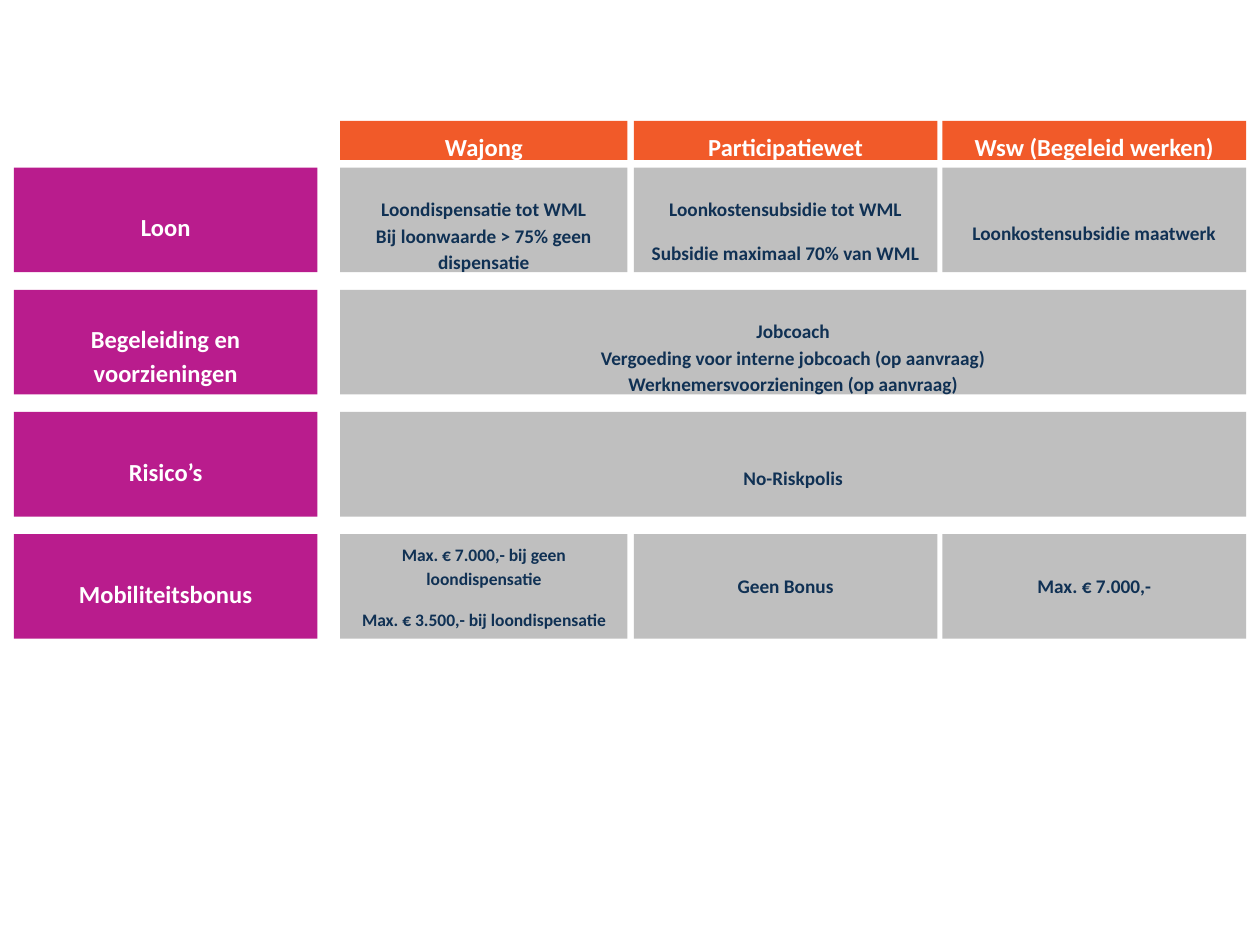
from copy import deepcopy
from dataclasses import dataclass

from pptx import Presentation
from pptx.dml.color import RGBColor
from pptx.enum.shapes import MSO_SHAPE
from pptx.enum.text import MSO_ANCHOR, PP_ALIGN
from pptx.oxml.ns import qn
from pptx.util import Inches, Pt


@dataclass(frozen=True)
class Theme:
    """Colours, font and type sizes of the slide."""
    font: str = "Calibri"
    header: RGBColor = RGBColor(0xF1, 0x5A, 0x29)
    label: RGBColor = RGBColor(0xB9, 0x1C, 0x8D)
    cell: RGBColor = RGBColor(0xBF, 0xBF, 0xBF)
    light: RGBColor = RGBColor(0xFF, 0xFF, 0xFF)
    dark: RGBColor = RGBColor(0x10, 0x31, 0x54)
    heading: int = 14
    body: int = 11
    small: int = 10


THEME = Theme()
COLUMNS = [(0, 2.28), (2.33, 2.41), (4.78, 2.41)]
FULL_WIDTH = [(0, 7.19)]
LABEL_WIDTH = 2.41
CELLS_OFFSET = 2.59
ROW_HEIGHT = 0.83
ROW_PITCH = 0.97

HEADERS = ["Wajong", "Participatiewet", "Wsw (Begeleid werken)"]
ROWS = [
    ("Loon", 0.32, COLUMNS, [
        ("Loondispensatie tot WML\vBij loonwaarde > 75% geen dispensatie", 0.21, THEME.body),
        ("Loonkostensubsidie tot WML\nSubsidie maximaal 70% van WML", 0.21, THEME.body),
        ("Loonkostensubsidie maatwerk", 0.4, THEME.body),
    ]),
    ("Begeleiding en voorzieningen", 0.24, FULL_WIDTH, [
        ("Jobcoach\vVergoeding voor interne jobcoach (op aanvraag)\v"
         "Werknemersvoorzieningen (op aanvraag)", 0.21, THEME.body),
    ]),
    ("Risico’s", 0.32, FULL_WIDTH, [("No-Riskpolis", 0.4, THEME.body)]),
    ("Mobiliteitsbonus", 0.32, COLUMNS, [
        ("Max. € 7.000,- bij geen loondispensatie\nMax. € 3.500,- bij loondispensatie",
         0.05, THEME.small),
        ("Geen Bonus", 0.29, THEME.body),
        ("Max. € 7.000,-", 0.29, THEME.body),
    ]),
]


def add_block(slide, box, text, fill, color, size, inset=0.05):
    """Add a filled rectangle whose text starts at the given top inset."""
    sp = slide.shapes.add_shape(MSO_SHAPE.RECTANGLE, *map(Inches, box))
    sp.shadow.inherit = False
    sp.fill.solid()
    sp.fill.fore_color.rgb = fill
    sp.line.fill.background()
    tf = sp.text_frame
    tf.word_wrap = True
    tf.vertical_anchor = MSO_ANCHOR.TOP
    tf.margin_top = Inches(inset)
    tf.text = text
    for p in tf.paragraphs:
        p.alignment = PP_ALIGN.CENTER
        p.line_spacing = 1.15
        p.space_after = Pt(10)
        for r in p.runs:
            r.font.name = THEME.font
            r.font.size = Pt(size)
            r.font.bold = True
            r.font.color.rgb = color
        for br in p._p.findall(qn("a:br")):
            br.append(deepcopy(p.runs[0]._r.rPr))


def add_headers(slide, left, top, height):
    """Place the column headings in a band."""
    for (x, width), text in zip(COLUMNS, HEADERS):
        add_block(slide, (left + x, top, width, height), text,
                  THEME.header, THEME.light, THEME.heading)


def add_row(slide, left, top, height, row):
    """Place a row label and its cells."""
    label, label_inset, columns, cells = row
    add_block(slide, (left, top, LABEL_WIDTH, height), label,
              THEME.label, THEME.light, THEME.heading, label_inset)
    for (x, width), (text, inset, size) in zip(columns, cells):
        add_block(slide, (left + CELLS_OFFSET + x, top, width, height), text,
                  THEME.cell, THEME.dark, size, inset)


def add_overview(slide, left, top):
    """Place the headings and all rows from the given corner."""
    add_headers(slide, left + CELLS_OFFSET, top, 0.31)
    for i, row in enumerate(ROWS):
        add_row(slide, left, top + 0.37 + i * ROW_PITCH, ROW_HEIGHT, row)


def main():
    """Build and save the slide."""
    prs = Presentation()
    prs.slide_width, prs.slide_height = Inches(10), Inches(7.5)
    s = prs.slides.add_slide(prs.slide_layouts[6])
    add_overview(s, 0.11, 0.96)
    prs.save("out.pptx")


if __name__ == "__main__":
    main()
